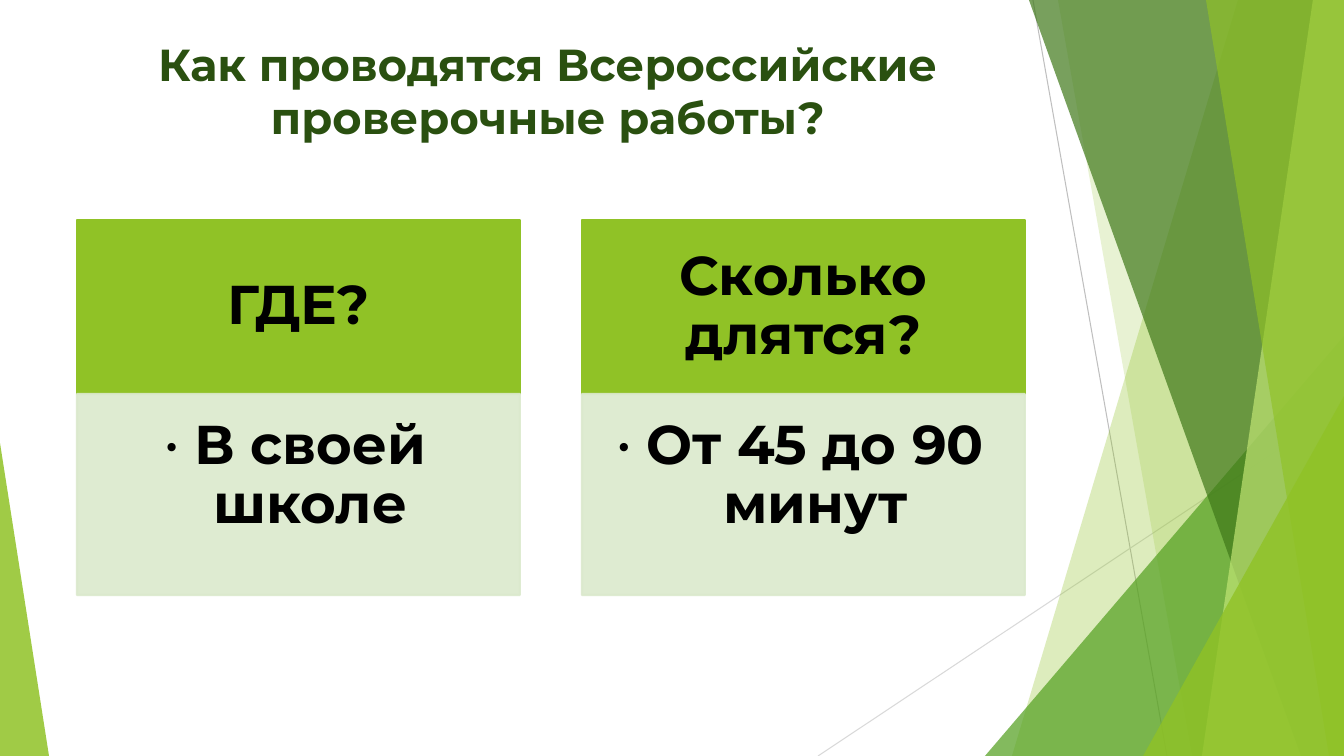
from lxml.etree import SubElement
from pptx import Presentation
from pptx.dml.color import RGBColor
from pptx.enum.shapes import MSO_CONNECTOR, MSO_SHAPE
from pptx.enum.text import MSO_ANCHOR as ANCHOR, MSO_AUTO_SIZE as AUTO_SIZE, PP_ALIGN as ALIGN
from pptx.oxml.ns import qn
from pptx.util import Pt

PX = 914400 / 100.8
WIDTH, HEIGHT = 1344, 756
FONT = "Montserrat"
COLORS = {
    "title": "2A5010", "text": "000000", "lime": "90C226", "pale": "DBE9CD",
    "green": "54A021", "forest": "3F7819", "light": "C0E474",
    "ray": "BFBFBF", "faint_ray": "D9D9D9",
}
QUESTIONS = [("ГДЕ?", "В своей школе"), ("Сколько длятся?", "От 45 до 90 минут")]


def px(length):
    """Turn px into EMU."""
    return round(length * PX)


def paint(color_format, color, opacity=100):
    """Set a solid fill or line fill with its opacity in percent."""
    color_format.solid()
    color_format.fore_color.rgb = RGBColor.from_string(COLORS[color])
    if opacity < 100:
        solid = color_format.fore_color._xFill
        SubElement(solid[0], qn("a:alpha"), val=str(opacity * 1000))


def place(shape, box):
    """Move a shape to a box given in px."""
    shape.left, shape.top, shape.width, shape.height = map(px, box)


def write(shape, text, size, color="text", spacing=1.0, anchor=ANCHOR.TOP,
          insets=(10, 5, 10, 5), bullet=False):
    """Write one bold centred paragraph into a shape."""
    frame = shape.text_frame
    frame.text = text
    frame.word_wrap = True
    frame.auto_size = AUTO_SIZE.NONE
    frame.vertical_anchor = anchor
    (frame.margin_left, frame.margin_top,
     frame.margin_right, frame.margin_bottom) = map(px, insets)
    paragraph = frame.paragraphs[0]
    paragraph.alignment = ALIGN.CENTER
    paragraph.line_spacing = spacing
    paragraph.space_before = Pt(0)
    font = paragraph.runs[0].font
    font.name, font.size, font.bold = FONT, Pt(size), True
    font.color.rgb = RGBColor.from_string(COLORS[color])
    if bullet:
        properties = paragraph._p.get_or_add_pPr()
        properties.set("marL", str(px(31)))
        properties.set("indent", str(px(-31)))
        SubElement(properties, qn("a:buFont"), typeface=FONT)
        SubElement(properties, qn("a:buChar"), char="•")


def add_ray(slide, start, end, color):
    """Draw one thin background line."""
    ray = slide.shapes.add_connector(MSO_CONNECTOR.STRAIGHT, *map(px, start + end))
    ray.line.width = Pt(0.75)
    paint(ray.line.fill, color)
    SubElement(ray._element.spPr, qn("a:effectLst"))


def finish_facet(facet, color, opacity):
    """Give a facet its translucent fill and no outline."""
    facet.shadow.inherit = False
    paint(facet.fill, color, opacity)
    facet.line.fill.background()


def add_band(slide, box, top_left, bottom_left, color, opacity):
    """Draw a full-height facet that ends at the right edge of the box."""
    left, top, width, height = box
    right, bottom = left + width, top + height
    outline = slide.shapes.build_freeform(left + top_left, top, scale=PX)
    outline.add_line_segments(
        [(right, top), (right, bottom), (left + bottom_left, bottom)], close=True)
    finish_facet(outline.convert_to_shape(), color, opacity)


def add_corner(slide, box, apex, color, opacity):
    """Draw a right-angled corner triangle with its apex at 0 (left) or 1 (right)."""
    corner = slide.shapes.add_shape(MSO_SHAPE.ISOSCELES_TRIANGLE, *map(px, box))
    corner.adjustments[0] = apex
    finish_facet(corner, color, opacity)


def add_facets(slide, box):
    """Draw the faceted background relative to the slide box."""
    left, top, width, height = box
    right, bottom = left + width, top + height
    add_ray(slide, (left + 1033, top), (left + 1167, bottom), "ray")
    add_ray(slide, (right, top + 406), (left + 818, bottom), "faint_ray")
    add_band(slide, box, 1238, 1012, "lime", 30)
    add_band(slide, box, 1058, 1192, "lime", 20)
    add_corner(slide, (right - 359, bottom - 420, 359, 420), 1, "green", 72)
    add_band(slide, box, 1029, 1301, "forest", 70)
    add_band(slide, box, 1313, 1202, "light", 70)
    add_band(slide, box, 1206, 1329, "lime", 65)
    add_corner(slide, (right - 201, bottom - 360, 201, 360), 1, "lime", 80)
    add_corner(slide, (left, bottom - 313, 49, 313), 0, "lime", 85)


def add_title(slide, box):
    """Place the slide title."""
    place(slide.shapes.title, box)
    write(slide.shapes.title, "Как проводятся Всероссийские проверочные работы?",
          32, color="title", anchor=ANCHOR.MIDDLE)


def fill_panel(panel, box, color, opacity=100):
    """Place a panel part and give it a fill and line of one colour."""
    place(panel, box)
    paint(panel.fill, color, opacity)
    panel.line.width = Pt(1.5)
    paint(panel.line.fill, color, opacity)


def add_panel(question, answer, box, texts):
    """Place a question above its bulleted answer within the box."""
    left, top, width, height = box
    header = 174
    fill_panel(question, (left, top, width, header), "lime")
    write(question, texts[0], 39, spacing=0.9, anchor=ANCHOR.MIDDLE,
          insets=(30, 17, 30, 17))
    fill_panel(answer, (left, top + header, width, height - header), "pale", 90)
    write(answer, texts[1], 39, spacing=0.9, insets=(23, 23, 30, 34), bullet=True)


def add_panels(slide, box, gap):
    """Share the box equally among the question panels."""
    left, top, width, height = box
    panel_width = (width - gap * (len(QUESTIONS) - 1)) / len(QUESTIONS)
    parts = {part.placeholder_format.idx: part for part in slide.placeholders}
    for column, texts in enumerate(QUESTIONS):
        panel_box = (left + column * (panel_width + gap), top, panel_width, height)
        add_panel(parts[2 * column + 1], parts[2 * column + 2], panel_box, texts)


def main():
    """Build and save the presentation."""
    deck = Presentation()
    deck.slide_width, deck.slide_height = px(WIDTH), px(HEIGHT)
    comparison = deck.slide_layouts.get_by_name("Comparison")
    slide = deck.slides.add_slide(comparison)
    add_facets(slide, (0, 0, WIDTH, HEIGHT))
    add_title(slide, (60, 30, 976, 120))
    add_panels(slide, (77, 220, 948, 375), gap=62)
    deck.save("out.pptx")


if __name__ == "__main__":
    main()
